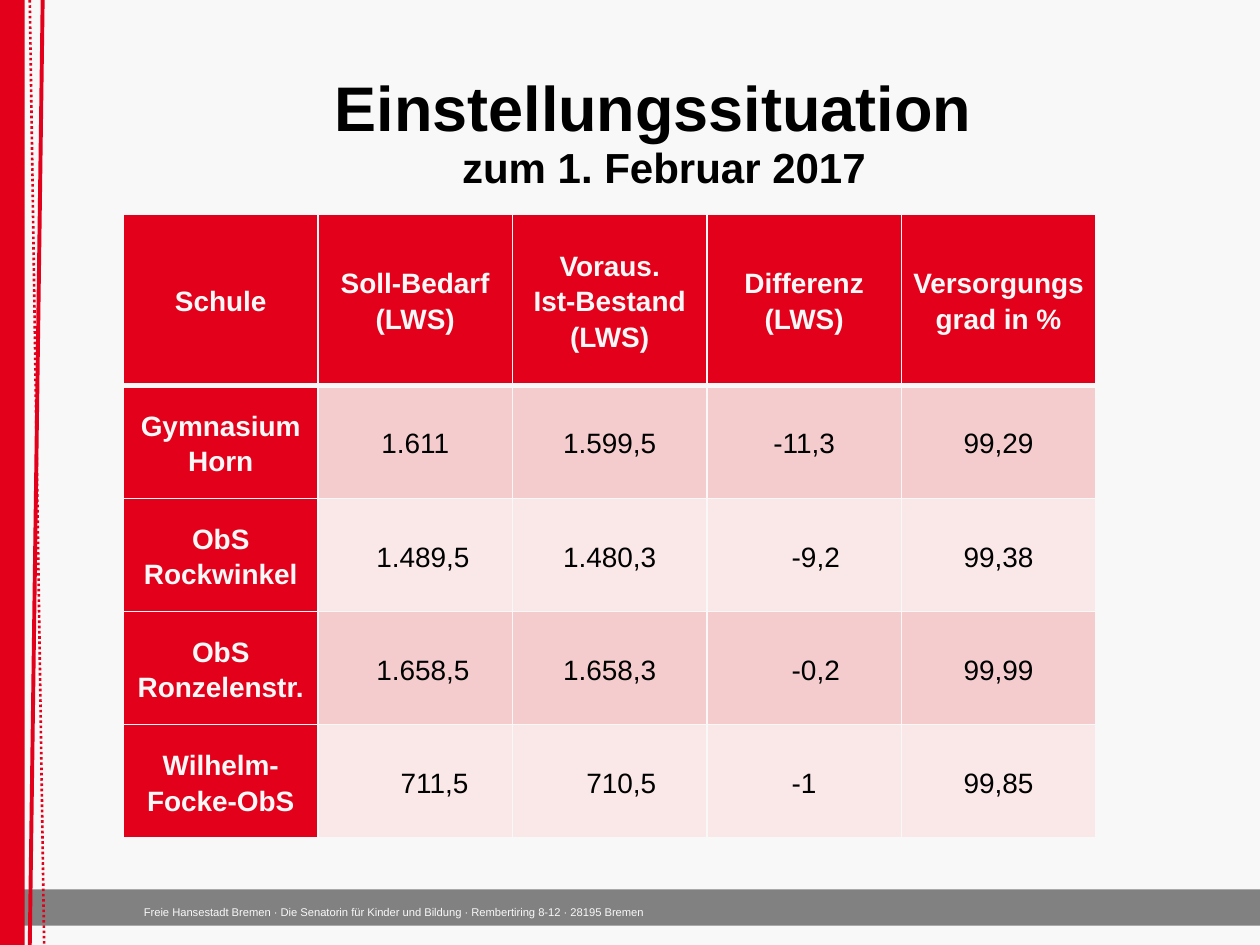
from lxml import etree
from pptx import Presentation
from pptx.dml.color import RGBColor
from pptx.enum import dml, shapes, text
from pptx.oxml import ns
from pptx.util import Cm, Pt

RED = RGBColor(0xE2, 0x00, 0x1A)
PAPER = RGBColor(0xF8, 0xF8, 0xF8)
BLACK = RGBColor(0, 0, 0)
GREY = RGBColor(0x33, 0x33, 0x33)
ROSE = RGBColor(0xF4, 0xCC, 0xCD)
PALE_ROSE = RGBColor(0xFA, 0xE7, 0xE8)


def add_stripe(slide, x_top, x_bottom, width, dash):
    stripe = slide.shapes.add_connector(
        shapes.MSO_CONNECTOR.STRAIGHT, Cm(x_top), 0, Cm(x_bottom), Cm(19.05))
    stripe.line.color.rgb = RED
    stripe.line.width = Pt(width)
    stripe.line.dash_style = dash
    etree.SubElement(stripe._element.spPr, ns.qn("a:effectLst"))


def add_border(cell, side, width):
    props = cell._tc.get_or_add_tcPr()
    border = etree.SubElement(props, ns.qn(f"a:ln{side}"), w=str(Pt(width)))
    fill = etree.SubElement(border, ns.qn("a:solidFill"))
    etree.SubElement(fill, ns.qn("a:srgbClr"), val=str(PAPER))


deck = Presentation()
deck.slide_width, deck.slide_height = Cm(25.4), Cm(19.05)
slide = deck.slides.add_slide(deck.slide_layouts[5])
slide.background.fill.solid()
slide.background.fill.fore_color.rgb = PAPER

footer = slide.shapes.add_shape(
    shapes.MSO_SHAPE.RECTANGLE, 0, Cm(17.93), Cm(25.4), Cm(0.73))
footer.shadow.inherit = False
footer.fill.solid()
footer.fill.fore_color.rgb = GREY
footer_color = footer._element.spPr.find(".//" + ns.qn("a:srgbClr"))
etree.SubElement(footer_color, ns.qn("a:alpha"), val="60000")
footer.line.fill.background()
address = footer.text_frame
address.margin_left, address.margin_right = Cm(2.9), Cm(0.25)
address.margin_top = address.margin_bottom = Cm(0.13)
address.vertical_anchor = text.MSO_ANCHOR.BOTTOM
address.text = ("Freie Hansestadt Bremen · Die Senatorin für Kinder und Bildung"
                " · Rembertiring 8-12 · 28195 Bremen")
address_line = address.paragraphs[0]
address_line.alignment = text.PP_ALIGN.LEFT
address_line.font.name = "Arial"
address_line.font.size = Pt(6.4)
address_line.font.color.rgb = PAPER

add_stripe(slide, 0.86, 0.6, 2.25, dml.MSO_LINE.SOLID)
edge = slide.shapes.add_shape(
    shapes.MSO_SHAPE.RECTANGLE, 0, 0, Cm(0.5), Cm(19.05))
edge.shadow.inherit = False
edge.fill.solid()
edge.fill.fore_color.rgb = RED
edge.line.fill.background()
add_stripe(slide, 0.6, 0.89, 1.5, dml.MSO_LINE.ROUND_DOT)

title = slide.shapes.title
title.left, title.top, title.width, title.height = (
    Cm(2.69), Cm(1.12), Cm(21.39), Cm(2.95))
title.text_frame.auto_size = text.MSO_AUTO_SIZE.NONE
title.text_frame.vertical_anchor = text.MSO_ANCHOR.MIDDLE
heading = title.text_frame.paragraphs[0]
heading.alignment = text.PP_ALIGN.CENTER
heading.line_spacing = 0.9
heading.font.name = "Arial"
heading.font.bold = True
heading.font.color.rgb = BLACK
for wording, size in (("Einstellungssituation", 36), (" ", 44),
                      ("zum 1. Februar 2017", 24)):
    if size == 24:
        heading.add_line_break()
    part = heading.add_run()
    part.text = wording
    part.font.size = Pt(size)

staffing = [
    ("Schule", "Soll-Bedarf (LWS)", "Voraus.\vIst-Bestand (LWS)",
     "Differenz (LWS)", "Versorgungsgrad in %"),
    ("Gymnasium Horn", "1.611", "1.599,5", "-11,3", "99,29"),
    ("ObS Rockwinkel", "1.489,5", "1.480,3", "-9,2", "99,38"),
    ("ObS Ronzelenstr.", "1.658,5", "1.658,3", "-0,2", "99,99"),
    ("Wilhelm-Focke-ObS", "711,5", "710,5", "-1", "99,85"),
]
indents = {(2, 1): 0.31, (3, 1): 0.31, (4, 1): 0.78,
           (2, 3): 0.47, (3, 3): 0.47, (4, 2): 0.47}

table = slide.shapes.add_table(
    5, 5, Cm(2.49), Cm(4.32), Cm(19.6), Cm(12.6)).table
table.first_col = True
for column in table.columns:
    column.width = Cm(3.92)
for r, entries in enumerate(staffing):
    table.rows[r].height = Cm(2.28 if r else 3.45)
    for c, entry in enumerate(entries):
        cell = table.cell(r, c)
        is_label = r == 0 or c == 0
        for side in "LRTB":
            is_header_rule = (r, side) in ((0, "B"), (1, "T"))
            add_border(cell, side, 3 if is_header_rule else 1)
        cell.fill.solid()
        cell.fill.fore_color.rgb = (
            RED if is_label else ROSE if r % 2 else PALE_ROSE)
        cell.vertical_anchor = text.MSO_ANCHOR.MIDDLE
        cell.margin_left = Cm(0.18 + indents.get((r, c), 0))
        cell.margin_right = Cm(0.18)
        cell.margin_top = cell.margin_bottom = 0
        cell.text = entry
        line = cell.text_frame.paragraphs[0]
        line.alignment = text.PP_ALIGN.CENTER
        line.line_spacing = 1.15
        line.space_after = Pt(6)
        line.font.name = "Arial"
        line.font.size = Pt(16)
        line.font.bold = is_label
        line.font.color.rgb = PAPER if is_label else BLACK

deck.save("out.pptx")
